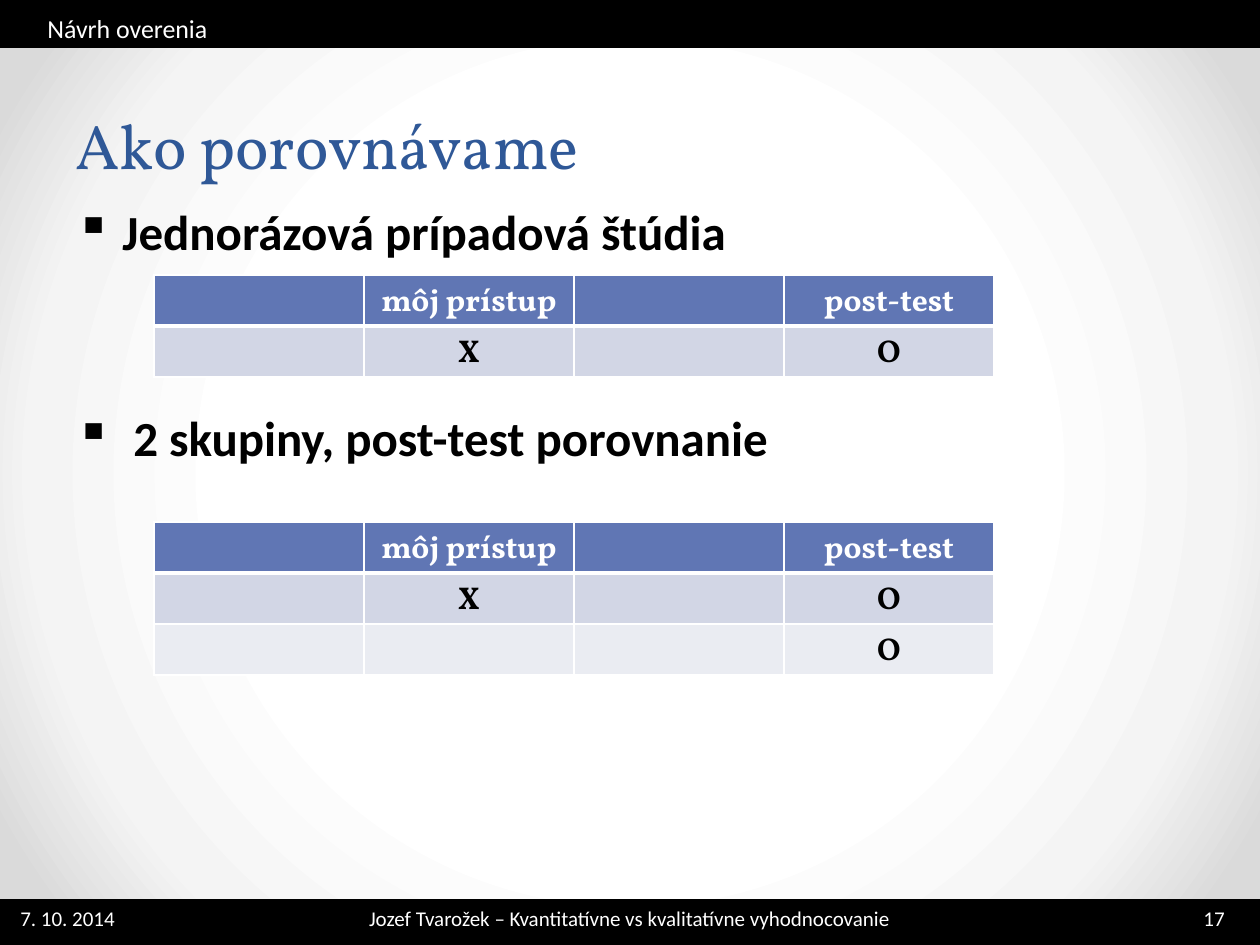
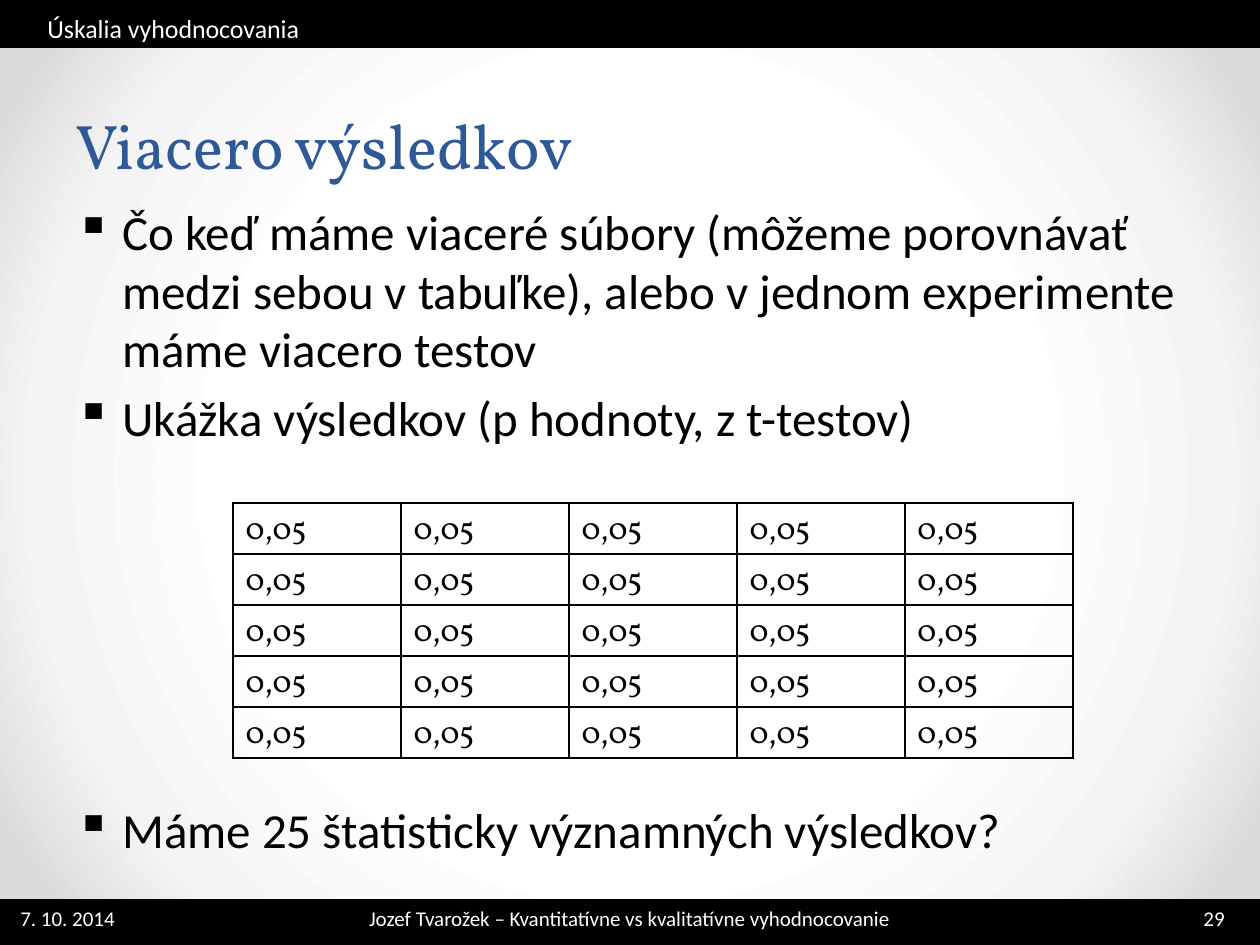
from dataclasses import dataclass

from lxml.etree import SubElement
from pptx import Presentation
from pptx.dml.color import RGBColor
from pptx.enum.shapes import MSO_SHAPE
from pptx.enum.text import MSO_ANCHOR, PP_ALIGN
from pptx.oxml import parse_xml
from pptx.oxml.ns import nsdecls, qn
from pptx.util import Emu, Pt

EMU_PER_PX = 914400 / 126
PAGE_WIDTH, PAGE_HEIGHT = 1260, 945
BAND_HEIGHT = 48
FOOTER_TOP = 899


@dataclass(frozen=True)
class Theme:
    sans: str = "Calibri"
    serif: str = "Vollkorn"
    black: str = "000000"
    white: str = "FFFFFF"
    title: str = "2F5897"
    header_fill: str = "6076B4"
    row_fills: tuple = ("D2D6E5", "EAECF2")
    glow: tuple = ((50, "FFFFFF"), (76, "F4F4F4"), (92, "DADADA"))
    title_size: float = 36
    title_line: float = 58
    body_size: float = 28
    cell_size: float = 18
    section_size: float = 14.8
    footer_size: float = 12


def px(length):
    return Emu(round(length * EMU_PER_PX))


class SlideBuilder:
    def __init__(self, theme):
        self.theme = theme
        self.deck = Presentation()
        self.deck.slide_width = px(PAGE_WIDTH)
        self.deck.slide_height = px(PAGE_HEIGHT)
        self.page = None
        self.glow_background()

    def glow_background(self):
        """Give the master a radial gradient, light in the middle."""
        master = self.deck.slide_master
        master.background.fill.gradient()
        gradient = master.element.xpath(".//p:bgPr/a:gradFill")[0]
        stops = "".join(
            f'<a:gs pos="{position * 1000}"><a:srgbClr val="{color}"/></a:gs>'
            for position, color in self.theme.glow)
        radial = parse_xml(
            f'<a:gradFill {nsdecls("a")} rotWithShape="1"><a:gsLst>{stops}</a:gsLst>'
            '<a:path path="circle"><a:fillToRect l="50000" t="50000" r="50000" b="50000"/>'
            '</a:path></a:gradFill>')
        gradient.getparent().replace(gradient, radial)

    def new_page(self, section, title, number):
        """Start a slide with its bands, footer, section name and title."""
        theme = self.theme
        self.page = self.deck.slides.add_slide(self.deck.slide_layouts[6])
        self.band(FOOTER_TOP, PAGE_HEIGHT - FOOTER_TOP)
        self.band(0, BAND_HEIGHT)
        footer = "Jozef Tvarožek – Kvantitatívne vs kvalitatívne vyhodnocovanie"
        self.label(8, 166, "7. 10. 2014")
        self.label(312, 635, footer, PP_ALIGN.CENTER)
        self.label(1191, 69, str(number))
        frame = self.text_frame(35, 6, 1191, 42)
        self.set_text(frame.paragraphs[0], section, theme.section_size, theme.white)
        frame = self.text_frame(63, 87, 1134, 88)
        frame.vertical_anchor = MSO_ANCHOR.MIDDLE
        heading = frame.paragraphs[0]
        heading.line_spacing = Pt(theme.title_line)
        self.set_text(heading, title, theme.title_size, theme.title, theme.serif)

    def band(self, top, height):
        band = self.page.shapes.add_shape(
            MSO_SHAPE.RECTANGLE, 0, px(top), px(PAGE_WIDTH), px(height))
        band.shadow.inherit = False
        band.fill.solid()
        band.fill.fore_color.rgb = RGBColor.from_string(self.theme.black)
        band.line.fill.background()

    def text_frame(self, left, top, width, height):
        box = self.page.shapes.add_textbox(px(left), px(top), px(width), px(height))
        box.text_frame.word_wrap = True
        return box.text_frame

    def set_text(self, para, text, size, color, face=None, bold=False):
        if text:
            para.add_run().text = text
        para.font.size = Pt(size)
        para.font.name = face or self.theme.sans
        para.font.bold = bold
        para.font.color.rgb = RGBColor.from_string(color)

    def label(self, left, width, text, align=PP_ALIGN.LEFT):
        para = self.text_frame(left, FOOTER_TOP, width, 38).paragraphs[0]
        para.alignment = align
        self.set_text(para, text, self.theme.footer_size, self.theme.white)

    def bullets(self, items, bold=False):
        """Add (text, points before, indent in px) items as one bulleted body."""
        frame = self.text_frame(63, 195, 1134, 684)
        for index, (text, before, indent) in enumerate(items):
            para = frame.add_paragraph() if index else frame.paragraphs[0]
            para.space_before = Pt(before)
            properties = para._p.get_or_add_pPr()
            properties.set("marL", str(px(indent)))
            properties.set("indent", str(-px(indent)))
            SubElement(properties, qn("a:buChar")).set("char", "▪")
            self.set_text(para, text, self.theme.body_size, self.theme.black, bold=bold)

    def table(self, left, top, column_width, rows, header=False):
        """Add a table: banded under a header row, or a plain black grid."""
        theme = self.theme
        row_height = 51
        count = len(rows[0])
        table = self.page.shapes.add_table(
            len(rows), count, px(left), px(top),
            px(column_width * count), px(row_height * len(rows))).table
        table.first_row = header
        table.horz_banding = header
        for row_index, texts in enumerate(rows):
            table.rows[row_index].height = px(row_height)
            is_header = header and row_index == 0
            for column_index, text in enumerate(texts):
                cell = table.cell(row_index, column_index)
                self.borders(cell, theme.white if header else theme.black,
                             3 if is_header else 1)
                if header:
                    cell.fill.solid()
                    fill = theme.header_fill if is_header else theme.row_fills[(row_index - 1) % 2]
                    cell.fill.fore_color.rgb = RGBColor.from_string(fill)
                else:
                    cell.fill.background()
                para = cell.text_frame.paragraphs[0]
                para.alignment = PP_ALIGN.CENTER if header else PP_ALIGN.LEFT
                self.set_text(para, text, theme.cell_size,
                              theme.white if is_header else theme.black, theme.serif, header)
        for column in table.columns:
            column.width = px(column_width)

    def borders(self, cell, color, bottom_width):
        properties = cell._tc.get_or_add_tcPr()
        for side, width in (("L", 1), ("R", 1), ("T", 1), ("B", bottom_width)):
            properties.append(parse_xml(
                f'<a:ln{side} {nsdecls("a")} w="{Pt(width)}"><a:solidFill>'
                f'<a:srgbClr val="{color}"/></a:solidFill></a:ln{side}>'))


def comparison_slide(builder):
    builder.new_page("Návrh overenia", "Ako porovnávame", 17)
    builder.bullets([("Jednorázová prípadová štúdia", 0, 47),
                     ("2 skupiny, post-test porovnanie", 84, 58)], bold=True)
    single_group = [("", "môj prístup", "", "post-test"), ("", "X", "", "O")]
    two_groups = single_group + [("", "", "", "O")]
    for top, rows in ((275, single_group), (522, two_groups)):
        builder.table(154, top, 210, rows, header=True)


def results_slide(builder):
    builder.new_page("Úskalia vyhodnocovania", "Viacero výsledkov", 29)
    builder.bullets([
        ("Čo keď máme viaceré súbory (môžeme porovnávať medzi sebou v tabuľke), "
         "alebo v jednom experimente máme viacero testov", 0, 47),
        ("Ukážka výsledkov (p hodnoty, z t-testov)", 5.6, 47),
        ("Máme 25 štatisticky významných výsledkov?", 202, 47)])
    builder.table(233, 503, 168, [["0,05"] * 5] * 5)


def main():
    builder = SlideBuilder(Theme())
    comparison_slide(builder)
    results_slide(builder)
    builder.deck.save("out.pptx")


if __name__ == "__main__":
    main()
